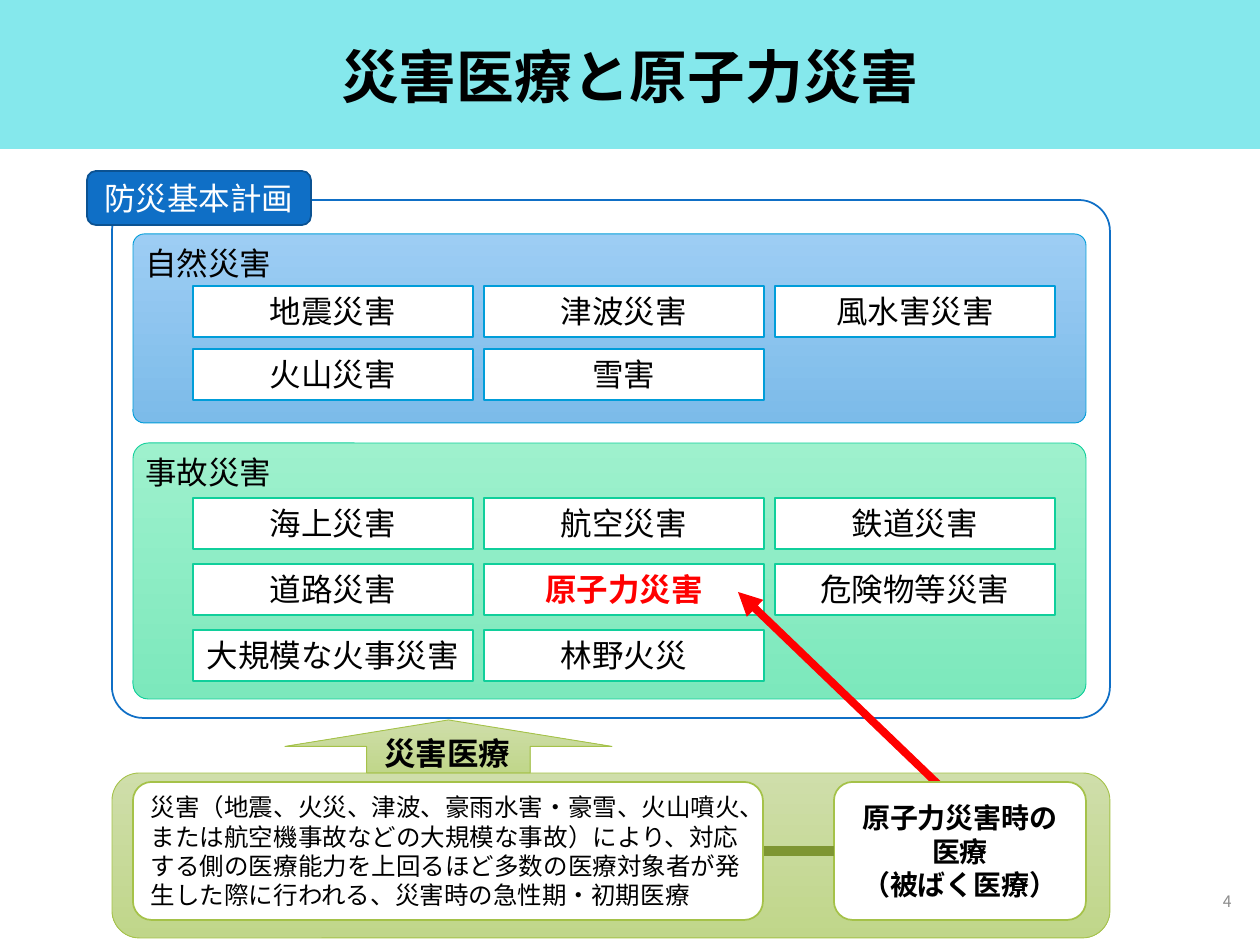
from dataclasses import dataclass

from lxml.etree import SubElement
from pptx import Presentation
from pptx.dml.color import RGBColor
from pptx.enum.shapes import MSO_CONNECTOR, MSO_SHAPE
from pptx.enum.text import MSO_ANCHOR, PP_ALIGN
from pptx.oxml.ns import qn
from pptx.util import Emu, Pt


@dataclass(frozen=True)
class Theme:
    font: str = "Noto Sans CJK JP"
    band: str = "85E8EC"
    white: str = "FFFFFF"
    black: str = "000000"
    red: str = "FF0000"
    gray: str = "8C8C8C"
    blue: str = "0F6FC6"
    navy: str = "0B5292"
    sky: str = "009DD9"
    sky_fill: tuple = ("9DCDF4", "7CBBE9")
    mint: str = "10CF9B"
    mint_fill: tuple = ("9EF1CD", "7CE8BC")
    olive: str = "A5C249"
    olive_fill: tuple = ("CFDEAA", "C0D68A")
    moss: str = "7E9632"
    title: int = 33
    label: int = 18
    medical: int = 16
    body: int = 14
    number: int = 9


T = Theme()
EMU_PER_PX = 914400 / 126
NATURAL = [["地震災害", "津波災害", "風水害災害"], ["火山災害", "雪害"]]
ACCIDENT = [
    ["海上災害", "航空災害", "鉄道災害"],
    ["道路災害", "原子力災害", "危険物等災害"],
    ["大規模な火事災害", "林野火災"],
]
HIGHLIGHT = "原子力災害"
DEFINITION = (
    "災害（地震、火災、津波、豪雨水害・豪雪、火山噴火、または航空機事故などの大規模な事故）"
    "により、対応する側の医療能力を上回るほど多数の医療対象者が発生した際に行われる、"
    "災害時の急性期・初期医療"
)


def px(*values):
    return [Emu(round(v * EMU_PER_PX)) for v in values]


def rgb(color):
    return RGBColor.from_string(color)


def write(sp, text, size, color=T.black, bold=False, align=PP_ALIGN.CENTER,
          anchor=MSO_ANCHOR.MIDDLE, wrap=True, spacing=None):
    tf = sp.text_frame
    tf.text = text
    tf.word_wrap = wrap
    tf.vertical_anchor = anchor
    for p in tf.paragraphs:
        p.alignment = align
        p.line_spacing = spacing
        for r in p.runs:
            r.font.name = T.font
            r.font.size = Pt(size)
            r.font.bold = bold
            r.font.color.rgb = rgb(color)
            SubElement(r.font._element, qn("a:ea")).set("typeface", T.font)


def add_box(s, kind, box, fill, line=None, width=1, corner=None):
    sp = s.shapes.add_shape(kind, *px(*box))
    sp.shadow.inherit = False
    if isinstance(fill, tuple):
        sp.fill.gradient()
        sp.fill.gradient_angle = 270
        for stop, color in zip(sp.fill.gradient_stops, fill):
            stop.color.rgb = rgb(color)
    else:
        sp.fill.solid()
        sp.fill.fore_color.rgb = rgb(fill)
    if line:
        sp.line.color.rgb = rgb(line)
        sp.line.width = Pt(width)
    else:
        sp.line.fill.background()
    if corner is not None:
        sp.adjustments[0] = corner
    return sp


def add_text(s, box, text, size, **style):
    write(s.shapes.add_textbox(*px(*box)), text, size, **style)


def add_label(s, left, top, text, bold=False):
    add_text(s, (left, top, 152, 50), text, T.label, bold=bold,
             align=PP_ALIGN.LEFT, anchor=MSO_ANCHOR.TOP, wrap=False)


def add_line(s, start, end, color, width, arrow=False):
    c = s.shapes.add_connector(MSO_CONNECTOR.STRAIGHT, *px(*start, *end))
    c.line.color.rgb = rgb(color)
    c.line.width = Pt(width)
    if arrow:
        SubElement(c.line._get_or_add_ln(), qn("a:tailEnd")).set("type", "triangle")
    SubElement(c._element.spPr, qn("a:effectLst"))


def add_group(s, name, top, height, fill, line, rows, first, step):
    add_box(s, MSO_SHAPE.ROUNDED_RECTANGLE, (133, top, 953, height), fill, line, 0.5, 0.06)
    for i, row in enumerate(rows):
        for j, text in enumerate(row):
            box = (193 + 291 * j, first + step * i, 280, 51)
            sp = add_box(s, MSO_SHAPE.RECTANGLE, box, T.white, line)
            hot = text == HIGHLIGHT
            write(sp, text, T.label, T.red if hot else T.black, hot, anchor=MSO_ANCHOR.TOP)
    add_label(s, 133, top + 4, name)


def add_card(s, left, width, text, size, **style):
    sp = add_box(s, MSO_SHAPE.ROUNDED_RECTANGLE, (left, 782, width, 138),
                 T.white, T.olive, corner=0.135)
    write(sp, text, size, **style)


def add_plan(s):
    add_box(s, MSO_SHAPE.ROUNDED_RECTANGLE, (112, 200, 998, 518), T.white, T.blue, corner=0.06)
    sp = add_box(s, MSO_SHAPE.ROUNDED_RECTANGLE, (87, 171, 224, 54), T.blue, T.navy)
    write(sp, "防災基本計画", T.label, T.white)
    add_group(s, "自然災害", 234, 189, T.sky_fill, T.sky, NATURAL, 286, 63)
    add_group(s, "事故災害", 443, 256, T.mint_fill, T.mint, ACCIDENT, 498, 66)


def add_medicine(s):
    add_box(s, MSO_SHAPE.ROUNDED_RECTANGLE, (112, 773, 998, 165), T.olive_fill, T.olive, 0.5)
    add_card(s, 133, 630, DEFINITION, T.body, align=PP_ALIGN.LEFT)
    add_box(s, MSO_SHAPE.UP_ARROW, (285, 720, 327, 53), T.olive_fill, T.olive, 0.5)
    add_label(s, 372, 728, "災害医療", bold=True)
    add_line(s, (942, 788), (738, 592), T.red, 4.5, arrow=True)
    add_card(s, 834, 252, "原子力災害時の医療\n（被ばく医療）", T.medical, bold=True)
    add_line(s, (764, 851), (834, 851), T.moss, 6)


def main():
    prs = Presentation()
    prs.slide_width, prs.slide_height = px(1260, 945)
    s = prs.slides.add_slide(prs.slide_layouts[6])
    add_box(s, MSO_SHAPE.RECTANGLE, (0, 0, 1260, 149), T.band)
    add_text(s, (87, 26, 1086, 107), "災害医療と原子力災害", T.title, bold=True, spacing=0.9)
    add_plan(s)
    add_medicine(s)
    add_text(s, (960, 876, 284, 50), "4", T.number, color=T.gray, align=PP_ALIGN.RIGHT)
    prs.save("out.pptx")


if __name__ == "__main__":
    main()
